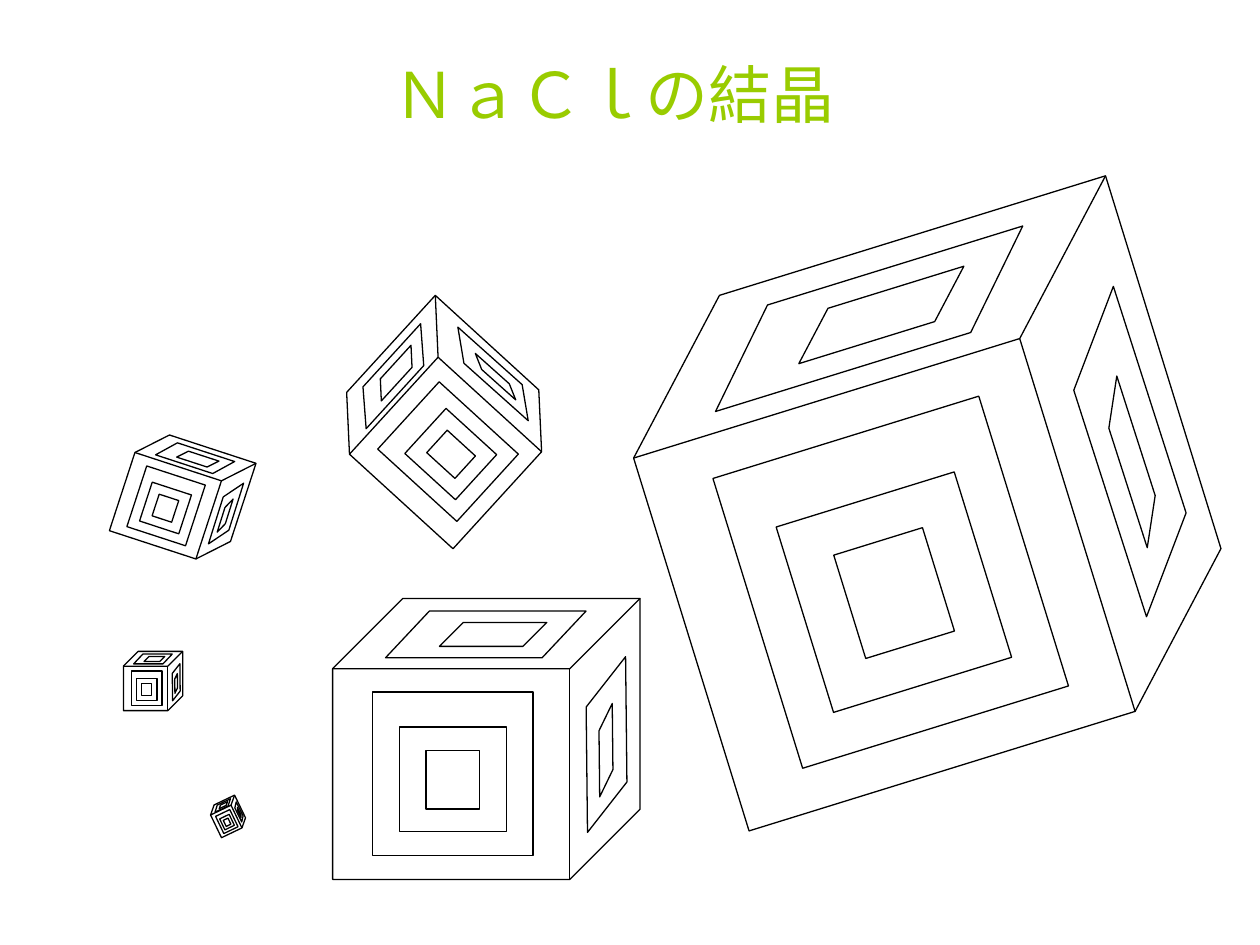
from math import cos, radians, sin

from lxml.etree import SubElement
from pptx import Presentation
from pptx.dml.color import RGBColor
from pptx.enum.shapes import MSO_SHAPE
from pptx.enum.text import MSO_ANCHOR, PP_ALIGN
from pptx.oxml.ns import qn
from pptx.util import Inches, Pt

COLORS = {"line": "000000", "title": "99CC00"}
FONT = "Noto Sans CJK JP"

# Cube box: left, top, width, height in inches, then rotation in degrees
CRYSTALS = [
    (5.24, 1.93, 4.24, 4.13, -17.2),
    (2.83, 2.62, 1.39, 1.46, -47.6),
    (0.98, 3.51, 0.94, 0.87, 18.1),
    (0.98, 5.17, 0.47, 0.47, 0),
    (1.69, 6.35, 0.24, 0.26, -25.6),
    (2.64, 4.75, 2.44, 2.23, 0),
]

# Parts of every crystal: shape, centre offset x and y, width and height
# (all in percent of the cube's box), adjustment, and whether on the right face
PARTS = [
    (MSO_SHAPE.PARALLELOGRAM, 2.2, -37.2, 34.9, 8.5, 1.0, False),
    (MSO_SHAPE.PARALLELOGRAM, -0.2, -37.2, 65.2, 16.6, 0.94, False),
    (MSO_SHAPE.PARALLELOGRAM, 39.1, 2.0, 13.0, 62.4, 1.25, True),
    (MSO_SHAPE.PARALLELOGRAM, 38.9, 4.0, 4.4, 33.2, 2.01, True),
    (MSO_SHAPE.RECTANGLE, -10.9, 14.4, 34.9, 37.3, None, False),
    (MSO_SHAPE.RECTANGLE, -10.9, 14.6, 17.4, 20.8, None, False),
    (MSO_SHAPE.CUBE, 0, 0, 100, 100, 0.25, False),
    (MSO_SHAPE.RECTANGLE, -10.9, 12.4, 52.1, 58.3, None, False),
]
SIDE_TURN = 89.4

presentation = Presentation()
presentation.slide_width, presentation.slide_height = Inches(10), Inches(7.5)
slide = presentation.slides.add_slide(presentation.slide_layouts[6])

for left, top, width, height, rotation in CRYSTALS:
    crystal = slide.shapes.add_group_shape()
    cosine, sine = cos(radians(rotation)), sin(radians(rotation))
    for kind, offset_x, offset_y, part_width, part_height, adjustment, on_side in PARTS:
        x, y = width * offset_x / 100, height * offset_y / 100
        center_x = left + width / 2 + x * cosine - y * sine
        center_y = top + height / 2 + x * sine + y * cosine
        across, down = width * part_width / 100, height * part_height / 100
        turn = rotation
        if on_side:
            across, down = down, across
            turn += SIDE_TURN
        shape = crystal.shapes.add_shape(
            kind, Inches(center_x - across / 2), Inches(center_y - down / 2),
            Inches(across), Inches(down))
        shape.rotation = turn
        if adjustment is not None:
            shape.adjustments[0] = adjustment
        if on_side:
            shape._element.spPr.xfrm.set("flipV", "1")
        shape.shadow.inherit = False
        shape.fill.background()
        shape.line.color.rgb = RGBColor.from_string(COLORS["line"])
        shape.line.width = Pt(0.75)

title = slide.shapes.add_textbox(Inches(1.53), Inches(0.44), Inches(6.69), Inches(0.87))
frame_format = {"word_wrap": False, "margin_top": 0, "vertical_anchor": MSO_ANCHOR.TOP}
for name, value in frame_format.items():
    setattr(title.text_frame, name, value)
paragraph = title.text_frame.paragraphs[0]
paragraph.alignment = PP_ALIGN.CENTER
run = paragraph.add_run()
run.text = "ＮａＣｌの結晶"
for name, value in {"size": Pt(36), "name": FONT}.items():
    setattr(run.font, name, value)
run.font.color.rgb = RGBColor.from_string(COLORS["title"])
SubElement(run.font._element, qn("a:ea")).set("typeface", FONT)

presentation.save("out.pptx")
